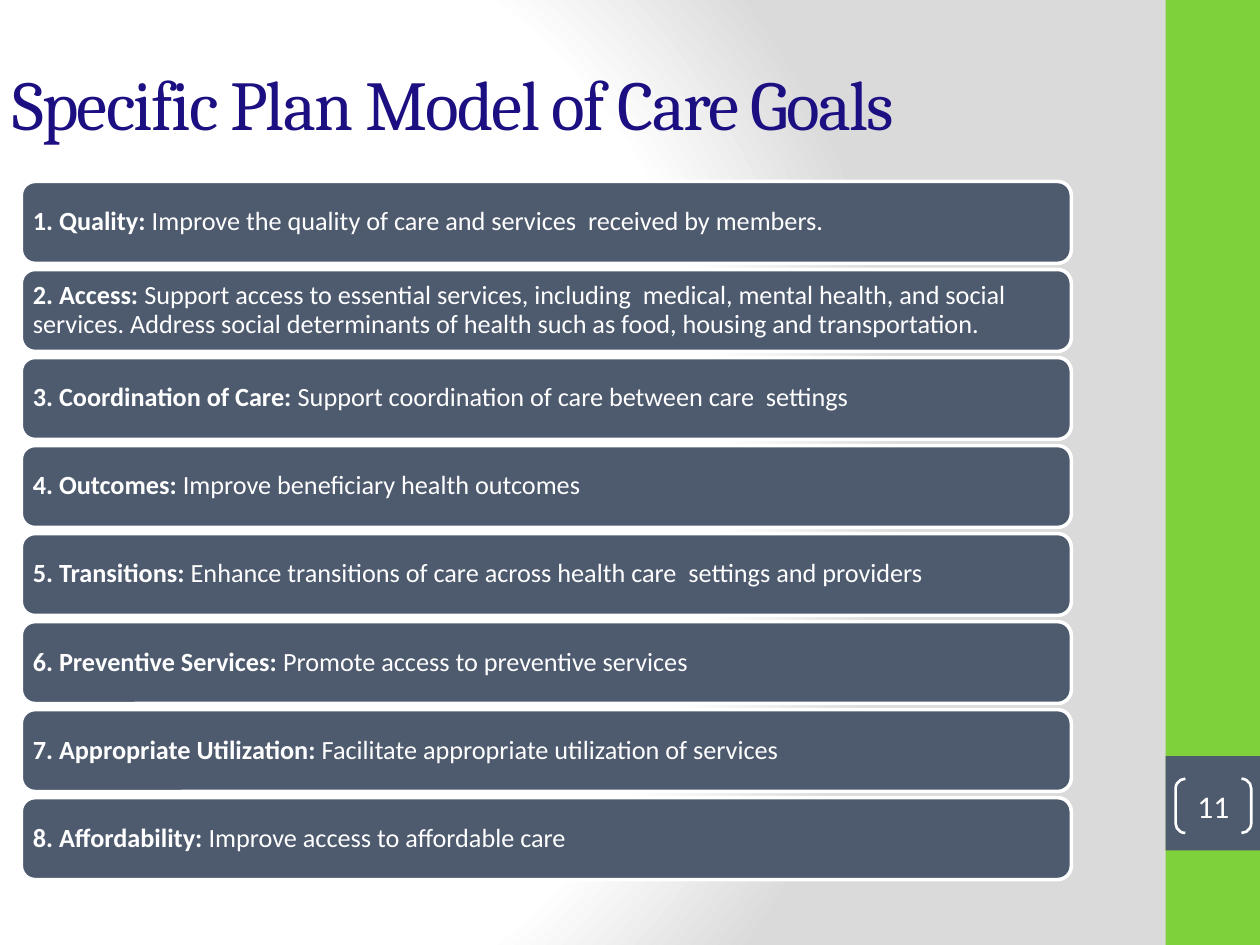
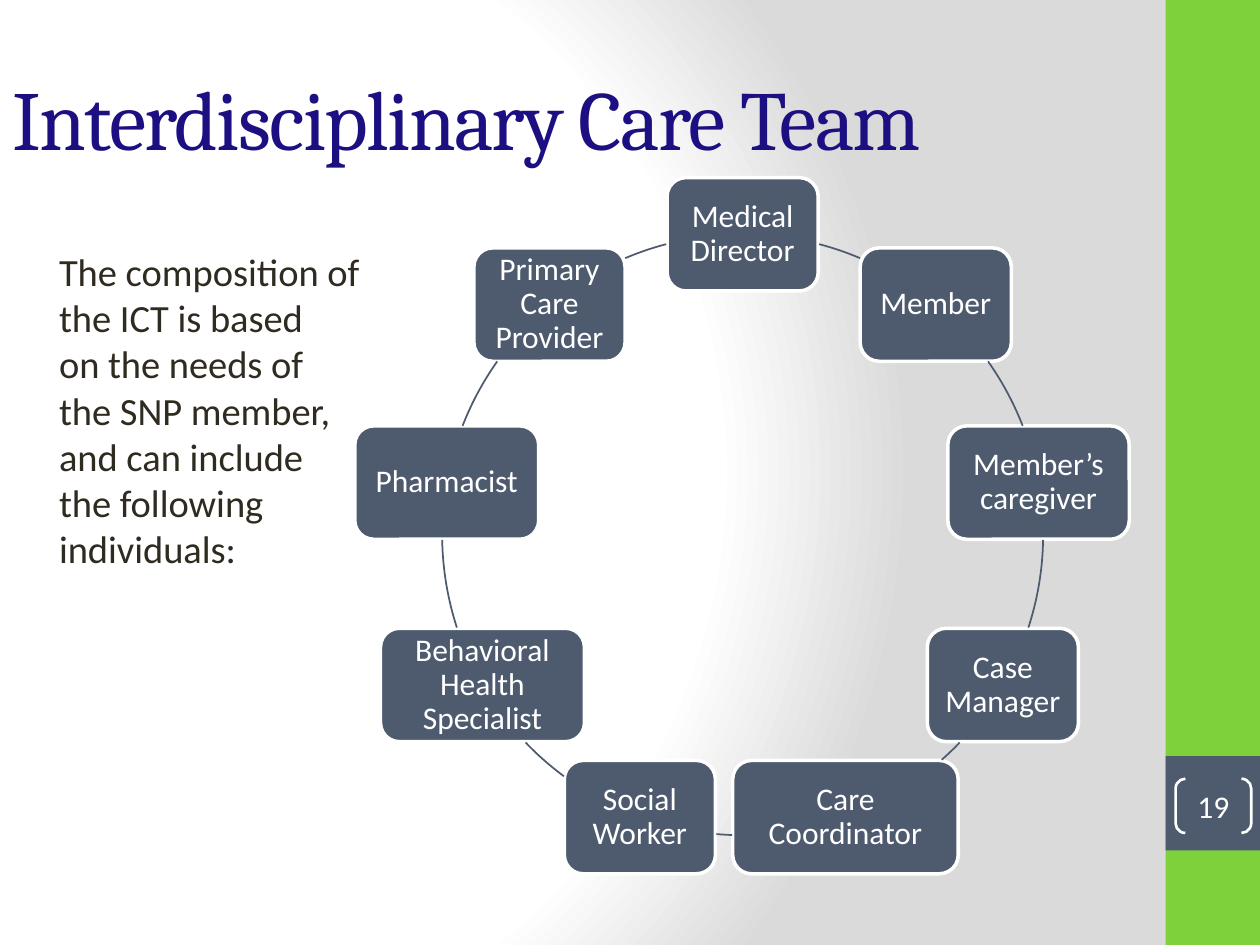
from dataclasses import dataclass
from math import cos, radians, sin

from pptx import Presentation
from pptx.dml.color import RGBColor
from pptx.enum.shapes import MSO_SHAPE as Preset
from pptx.enum.text import MSO_ANCHOR as Anchor, PP_ALIGN as Align
from pptx.oxml import parse_xml
from pptx.oxml.ns import nsdecls, qn
from pptx.util import Pt

GOALS_TITLE = "Specific Plan Model of Care Goals"
GOALS = [
    ("Quality", "Improve the quality of care and services  received by members."),
    ("Access", "Support access to essential services, including  medical, mental health, "
               "and social services. Address social determinants of health such as food, "
               "housing and transportation."),
    ("Coordination of Care", "Support coordination of care between care  settings"),
    ("Outcomes", "Improve beneficiary health outcomes"),
    ("Transitions", "Enhance transitions of care across health care  settings and providers"),
    ("Preventive Services", "Promote access to preventive services"),
    ("Appropriate Utilization", "Facilitate appropriate utilization of services"),
    ("Affordability", "Improve access to affordable care"),
]

TEAM_TITLE = "Interdisciplinary Care Team"
TEAM_INTRO = [
    "The composition of the ICT is based",
    "on the needs of the SNP member,",
    "and can include the following",
    "individuals:",
]
# Role and box width, clockwise from the top
TEAM = [
    ("Medical Director", 86.4),
    ("Member", 86.4),
    ("Member’s caregiver", 103.7),
    ("Case Manager", 86.4),
    ("Care Coordinator", 128.9),
    ("Social Worker", 86.4),
    ("Behavioral Health Specialist", 116.6),
    ("Pharmacist", 105.1),
    ("Primary Care Provider", 86.4),
]


@dataclass(frozen=True)
class Theme:
    green: str = "7FD13B"
    slate: str = "4E5B6F"
    white: str = "FFFFFF"
    shade: str = "DADADA"
    navy: str = "1C0F81"
    ink: str = "2F2B20"
    heading_font: str = "Cambria"
    body_font: str = "Calibri"
    goals_title_size: float = 40
    team_title_size: float = 48
    intro_size: float = 22
    label_size: float = 18
    goal_size: float = 15


THEME = Theme()
WIDTH, HEIGHT = 720, 540
BAND_LEFT, BAND_WIDTH = 666, 54

GOAL_LEFT, GOAL_TOP, GOAL_WIDTH, GOAL_HEIGHT, GOAL_PITCH = 12.2, 103.7, 600, 46.8, 50.3

RING_X, RING_Y, RING_RADIUS, MEMBER_HEIGHT = 424.4, 305.6, 171.7, 64.8
ARC_STEP = 0.25


def colour(value):
    return RGBColor.from_string(value)


def add_run(paragraph, text, size, ink, font=THEME.body_font, bold=False):
    run = paragraph.add_run()
    run.text = text
    run.font.size, run.font.name, run.font.bold = Pt(size), font, bold
    run.font.color.rgb = colour(ink)
    return run


def add_preset(slide, preset, box, fill=None, line=None, weight=1):
    shape = slide.shapes.add_shape(preset, *map(Pt, box))
    shape.shadow.inherit = False
    if fill:
        shape.fill.solid()
        shape.fill.fore_color.rgb = colour(fill)
    else:
        shape.fill.background()
    if line:
        shape.line.color.rgb = colour(line)
        shape.line.width = Pt(weight)
    else:
        shape.line.fill.background()
    return shape


def set_frame(shape, anchor, inset_x, inset_y, align=Align.LEFT):
    """Lay out the text frame and return its first paragraph."""
    frame = shape.text_frame
    frame.word_wrap = True
    frame.vertical_anchor = anchor
    frame.margin_left = frame.margin_right = Pt(inset_x)
    frame.margin_top = frame.margin_bottom = Pt(inset_y)
    paragraph = frame.paragraphs[0]
    paragraph.alignment = align
    return paragraph


def add_card(slide, box, inset, align):
    """Draw a rounded slate card and return its paragraph."""
    card = add_preset(slide, Preset.ROUNDED_RECTANGLE, box, THEME.slate, THEME.white, 2)
    paragraph = set_frame(card, Anchor.MIDDLE, inset, inset, align)
    paragraph.line_spacing = 0.9
    return paragraph


def set_background(slide):
    slide.background.fill.gradient()
    old = slide.element.find(".//" + qn("a:gradFill"))
    stops = [(0, THEME.white), (75, THEME.white), (100, THEME.shade)]
    stop_xml = "".join(
        f'<a:gs pos="{place * 1000}"><a:srgbClr val="{value}"/></a:gs>' for place, value in stops)
    old.getparent().replace(old, parse_xml(
        f'<a:gradFill {nsdecls("a")} rotWithShape="1"><a:gsLst>{stop_xml}</a:gsLst>'
        '<a:path path="circle"><a:fillToRect l="20000" t="50000" r="100000" b="50000"/>'
        '</a:path></a:gradFill>'))


def add_base_slide(presentation, number, title, title_box, title_size):
    slide = presentation.slides.add_slide(presentation.slide_layouts[6])
    set_background(slide)
    add_preset(slide, Preset.RECTANGLE, (BAND_LEFT, 0, BAND_WIDTH, HEIGHT), THEME.green)
    add_preset(slide, Preset.RECTANGLE, (BAND_LEFT, 432, BAND_WIDTH, BAND_WIDTH), THEME.slate)
    bracket = add_preset(slide, Preset.DOUBLE_BRACKET, (671.8, 445, 43.2, 31),
                         line=THEME.white, weight=1.5)
    bracket.adjustments[0] = 0.18
    paragraph = set_frame(bracket, Anchor.MIDDLE, 0, 0, Align.CENTER)
    add_run(paragraph, str(number), THEME.label_size, THEME.white)

    heading = slide.shapes.add_textbox(*map(Pt, title_box))
    paragraph = set_frame(heading, Anchor.MIDDLE, 7.2, 3.6)
    run = add_run(paragraph, title, title_size, THEME.navy, THEME.heading_font)
    run.font._element.set("spc", "-100")
    return slide


def build_goals(presentation):
    slide = add_base_slide(presentation, 11, GOALS_TITLE, (0, 21.6, 648, 74.2),
                           THEME.goals_title_size)
    for index, (name, aim) in enumerate(GOALS):
        box = (GOAL_LEFT, GOAL_TOP + index * GOAL_PITCH, GOAL_WIDTH, GOAL_HEIGHT)
        paragraph = add_card(slide, box, 4.3, Align.LEFT)
        add_run(paragraph, f"{index + 1}. {name}: ", THEME.goal_size, THEME.white, bold=True)
        add_run(paragraph, aim, THEME.goal_size, THEME.white)


def ring_point(degrees):
    """Point on the ring, with degrees counted clockwise from the top."""
    angle = radians(degrees)
    return RING_X + RING_RADIUS * sin(angle), RING_Y - RING_RADIUS * cos(angle)


def contains(box, point):
    left, top, width, height = box
    return left <= point[0] <= left + width and top <= point[1] <= top + height


def add_ring_arc(slide, start, sweep, start_box, end_box):
    """Join two neighbouring boxes by the part of the ring that lies between them."""
    angles = [start + step * ARC_STEP for step in range(int(sweep / ARC_STEP) + 1)]
    free = [angle for angle in angles
            if not any(contains(box, ring_point(angle)) for box in (start_box, end_box))]
    diameter = 2 * RING_RADIUS
    ring_box = (RING_X - RING_RADIUS, RING_Y - RING_RADIUS, diameter, diameter)
    arc = add_preset(slide, Preset.ARC, ring_box, line=THEME.slate)
    for index, angle in enumerate((free[0], free[-1])):
        # 60000 units a degree, against 100000 for an adjustment of one
        arc.adjustments[index] = (angle - 90) % 360 * 0.6


def build_team(presentation):
    slide = add_base_slide(presentation, 19, TEAM_TITLE, (0, 21.6, 600, 90),
                           THEME.team_title_size)
    sweep = 360 / len(TEAM)
    boxes = []
    for index, (role, width) in enumerate(TEAM):
        x, y = ring_point(index * sweep)
        boxes.append((x - width / 2, y - MEMBER_HEIGHT / 2, width, MEMBER_HEIGHT))
        paragraph = add_card(slide, boxes[-1], 5, Align.CENTER)
        add_run(paragraph, role, THEME.label_size, THEME.white)
    for index, box in enumerate(boxes):
        add_ring_arc(slide, index * sweep, sweep, box, boxes[(index + 1) % len(boxes)])

    intro = slide.shapes.add_textbox(Pt(18), Pt(138.2), Pt(195.1), Pt(198))
    paragraph = set_frame(intro, Anchor.TOP, 7.2, 3.6)
    paragraph._p.get_or_add_pPr().set("marL", str(Pt(8.64)))
    for index, line in enumerate(TEAM_INTRO):
        if index:
            paragraph.add_line_break()
        add_run(paragraph, line, THEME.intro_size, THEME.ink)


def main():
    presentation = Presentation()
    presentation.slide_width, presentation.slide_height = Pt(WIDTH), Pt(HEIGHT)
    build_goals(presentation)
    build_team(presentation)
    presentation.save("out.pptx")


if __name__ == "__main__":
    main()
